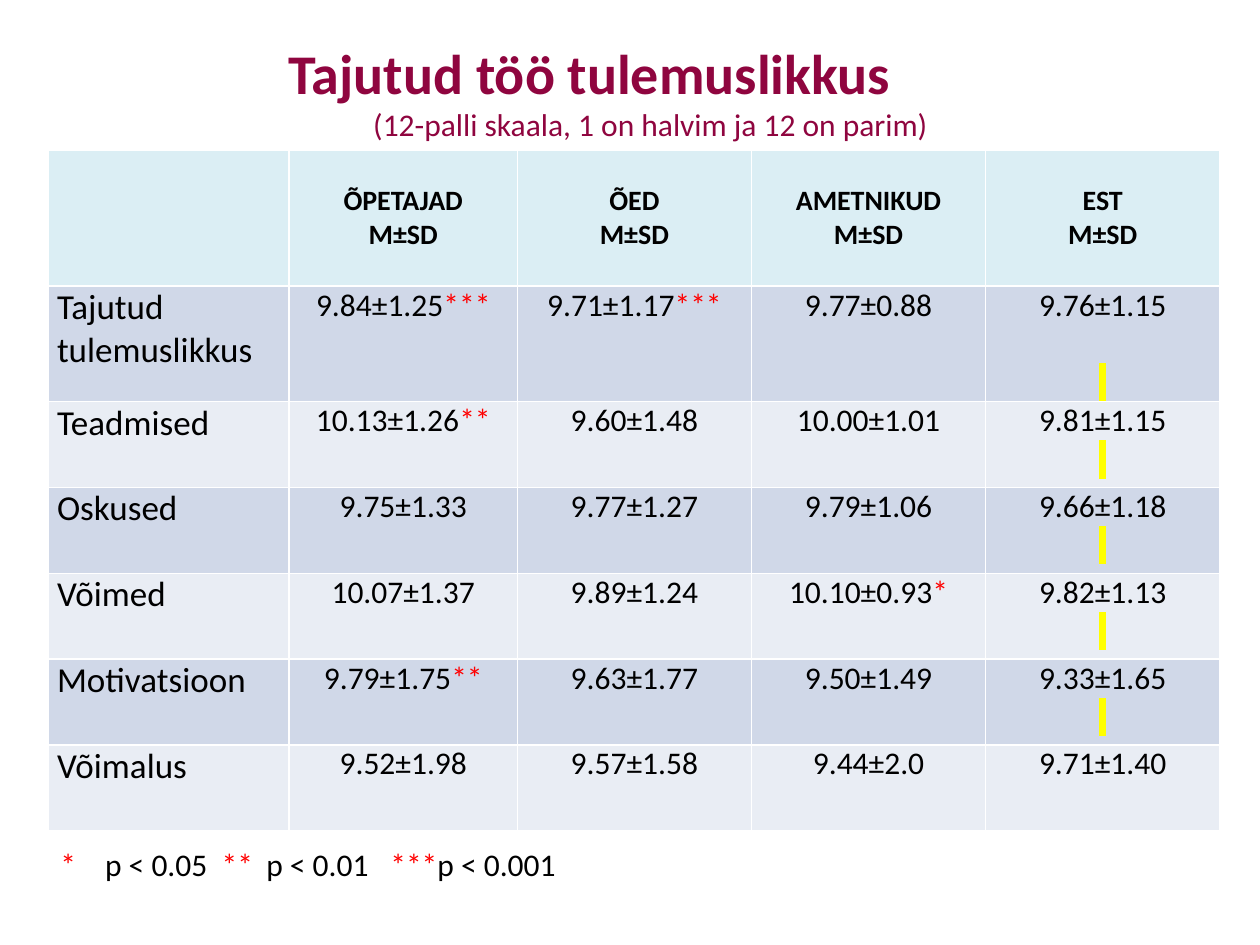
from dataclasses import dataclass
from itertools import groupby

from lxml.etree import SubElement
from pptx import Presentation
from pptx.dml.color import RGBColor as Rgb
from pptx.enum.text import MSO_ANCHOR as Anchor, MSO_AUTO_SIZE as Fit, PP_ALIGN as Align
from pptx.oxml.ns import qn
from pptx.util import Cm, Pt


@dataclass(frozen=True)
class Theme:
    font: str = "Calibri"
    wine: str = "8F053F"
    ink: str = "000000"
    star: str = "FF0000"
    mark: str = "FFFF00"
    head: str = "DBEEF4"
    bands: tuple = ("D0D8E8", "E9EDF4")
    big: int = 32
    label: int = 20
    body: int = 18
    small: int = 16


class Deck:
    def __init__(self, theme):
        self.theme = theme
        self.prs = Presentation()
        self.prs.slide_width, self.prs.slide_height = Cm(25.4), Cm(19.05)
        self.slide = self.prs.slides.add_slide(self.prs.slide_layouts[5])

    def style(self, para, size, color, bold=False, align=Align.LEFT):
        para.alignment = align
        for run in para.runs:
            font = run.font
            font.name, font.size, font.bold = self.theme.font, Pt(size), bold
            font.color.rgb = Rgb.from_string(color)

    def stars(self, para, text, align=Align.LEFT):
        """Write text with its asterisks in the star colour."""
        for _, part in groupby(text, lambda char: char == "*"):
            para.add_run().text = "".join(part)
        self.style(para, self.theme.body, self.theme.ink, align=align)
        for run in para.runs:
            if "*" in run.text:
                run.font.color.rgb = Rgb.from_string(self.theme.star)

    def title(self, text, note, box, indent):
        shape = self.slide.shapes.title
        shape.left, shape.top, shape.width, shape.height = map(Cm, box)
        frame = shape.text_frame
        frame.auto_size, frame.vertical_anchor = Fit.NONE, Anchor.TOP
        frame.text = f"{text}\n{note}"
        first, second = frame.paragraphs
        self.style(first, self.theme.big, self.theme.wine, True)
        self.style(second, self.theme.body, self.theme.wine)
        second._p.get_or_add_pPr().set("marL", str(Cm(indent)))

    def flag(self, frame, gap):
        """Add a narrow highlighted mark below a value."""
        para = frame.add_paragraph()
        para.text = chr(160)
        para.space_before = Pt(gap)
        self.style(para, self.theme.body, self.theme.ink, align=Align.CENTER)
        props = para.runs[0]._r.get_or_add_rPr()
        light = SubElement(props, qn("a:highlight"))
        SubElement(light, qn("a:srgbClr"), val=self.theme.mark)
        props.find(qn("a:solidFill")).addnext(light)

    def cell(self, cell, fill, anchor=Anchor.TOP):
        cell.fill.solid()
        cell.fill.fore_color.rgb = Rgb.from_string(fill)
        cell.margin_left = cell.margin_right = Cm(0.18)
        cell.margin_top = cell.margin_bottom = 0
        cell.vertical_anchor = anchor
        return cell.text_frame

    def table(self, heads, rows, left, top, widths, heights):
        theme = self.theme
        table = self.slide.shapes.add_table(
            len(rows) + 1, len(widths), Cm(left), Cm(top),
            Cm(sum(widths)), Cm(sum(heights))).table
        table.horz_banding = False
        for col, width in zip(table.columns, widths):
            col.width = Cm(width)
        for row, height in zip(table.rows, heights):
            row.height = Cm(height)

        # Header row
        for c, head in enumerate(heads):
            frame = self.cell(table.cell(0, c), theme.head, Anchor.MIDDLE)
            if head:
                frame.text = f"{head}\nM±SD"
                for para in frame.paragraphs:
                    self.style(para, theme.small, theme.ink, True, Align.CENTER)

        # Labels, values and marks in the last column
        for r, (label, *values) in enumerate(rows, 1):
            fill = theme.bands[(r - 1) % 2]
            frame = self.cell(table.cell(r, 0), fill)
            frame.text = label
            self.style(frame.paragraphs[0], theme.label, theme.ink)
            for c, value in enumerate(values, 1):
                frame = self.cell(table.cell(r, c), fill)
                self.stars(frame.paragraphs[0], value, Align.CENTER)
            if r < len(rows):
                self.flag(frame, 22 if r == 1 else 0)

    def legend(self, text, box, stops):
        frame = self.slide.shapes.add_textbox(*map(Cm, box)).text_frame
        frame.word_wrap = True
        para = frame.paragraphs[0]
        self.stars(para, text)
        tabs = SubElement(para._p.get_or_add_pPr(), qn("a:tabLst"))
        for stop in stops:
            SubElement(tabs, qn("a:tab"), pos=str(Cm(stop)), algn="l")


HEADS = ["", "ÕPETAJAD", "ÕED", "AMETNIKUD", "EST"]
ROWS = [
    ["Tajutud tulemuslikkus", "9.84±1.25***", "9.71±1.17***", "9.77±0.88", "9.76±1.15"],
    ["Teadmised", "10.13±1.26**", "9.60±1.48", "10.00±1.01", "9.81±1.15"],
    ["Oskused", "9.75±1.33", "9.77±1.27", "9.79±1.06", "9.66±1.18"],
    ["Võimed", "10.07±1.37", "9.89±1.24", "10.10±0.93*", "9.82±1.13"],
    ["Motivatsioon", "9.79±1.75**", "9.63±1.77", "9.50±1.49", "9.33±1.65"],
    ["Võimalus", "9.52±1.98", "9.57±1.58", "9.44±2.0", "9.71±1.40"],
]


def main():
    deck = Deck(Theme())
    deck.table(HEADS, ROWS, 0.97, 3.03,
               [4.86, 4.6] + [4.72] * 3, [2.74, 2.32] + [1.73] * 5)
    deck.title("Tajutud töö tulemuslikkus",
               "(12-palli skaala, 1 on halvim ja 12 on parim)",
               (5.56, 0.64, 15.82, 2.39), 1.71)
    deck.legend("*\tp < 0.05\t**\tp < 0.01\t***p < 0.001",
                (0.97, 16.92, 10.9, 1.02), (0.9, 3.25, 4.15, 6.65))
    deck.prs.save("out.pptx")


if __name__ == "__main__":
    main()
